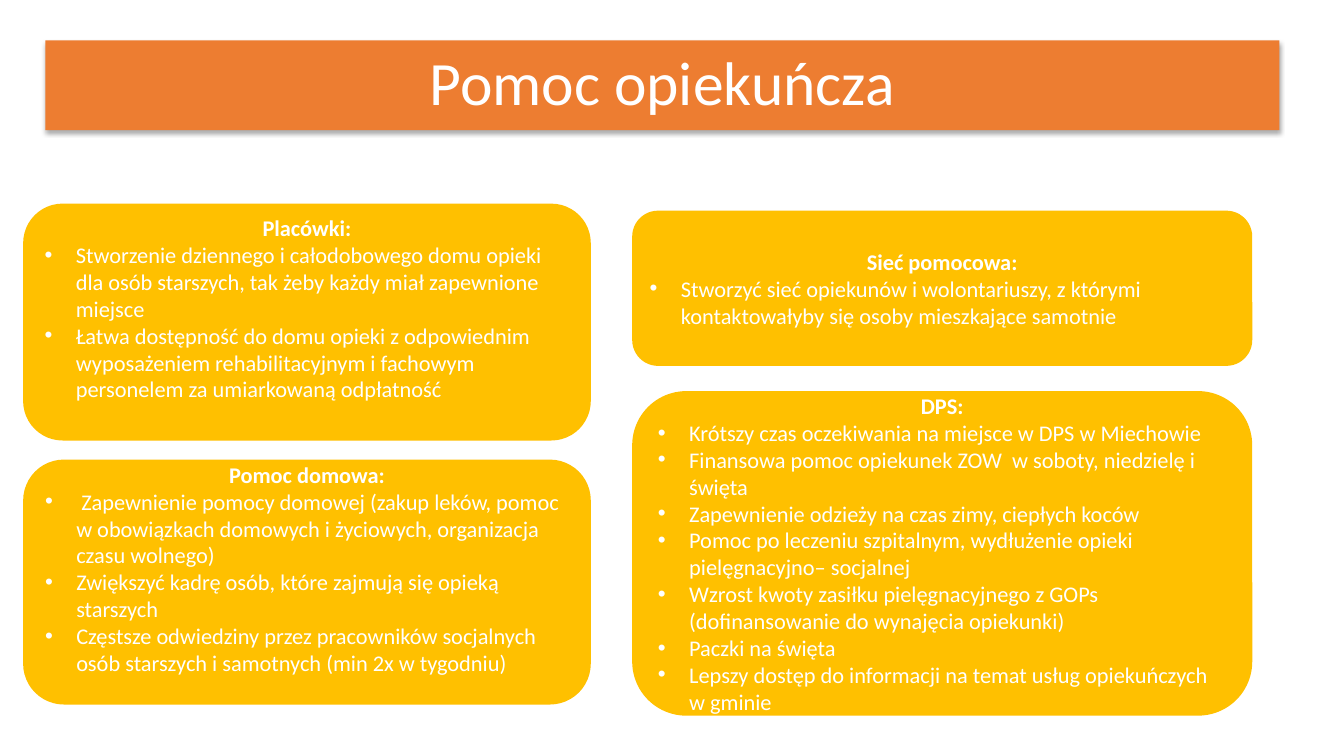
from lxml import etree
from pptx import Presentation
from pptx.dml.color import RGBColor
from pptx.enum.shapes import MSO_SHAPE
from pptx.enum.text import MSO_ANCHOR, PP_ALIGN
from pptx.oxml import parse_xml
from pptx.oxml.ns import nsdecls, qn
from pptx.util import Inches, Pt

TITLE = "Pomoc opiekuńcza"
ORANGE, AMBER, WHITE = "ED7D31", "FFC000", "FFFFFF"
INDENT = 0.31

# heading, (left, top, width, height), bottom inset, bullet points
CARDS = [
    ("Placówki:", (0.23, 2.02, 5.63, 2.35), 0.32, [
        "Stworzenie dziennego i całodobowego domu opieki dla osób starszych, tak żeby każdy miał zapewnione miejsce",
        "Łatwa dostępność do domu opieki z odpowiednim wyposażeniem rehabilitacyjnym i fachowym personelem "
        "za umiarkowaną odpłatność",
    ]),
    ("Pomoc domowa:", (0.23, 4.56, 5.63, 2.43), 0.32, [
        " Zapewnienie pomocy domowej (zakup leków, pomoc w obowiązkach domowych i życiowych, "
        "organizacja czasu wolnego)",
        "Zwiększyć kadrę osób, które zajmują się opieką starszych",
        "Częstsze odwiedziny przez pracowników socjalnych osób starszych i samotnych (min 2x w tygodniu)",
    ]),
    ("DPS:", (6.27, 3.88, 6.15, 3.22), 0.05, [
        "Krótszy czas oczekiwania na miejsce w DPS w Miechowie",
        "Finansowa pomoc opiekunek ZOW  w soboty, niedzielę i święta",
        "Zapewnienie odzieży na czas zimy, ciepłych koców",
        "Pomoc po leczeniu szpitalnym, wydłużenie opieki pielęgnacyjno– socjalnej",
        "Wzrost kwoty zasiłku pielęgnacyjnego z GOPs (dofinansowanie do wynajęcia opiekunki)",
        "Paczki na święta",
        "Lepszy dostęp do informacji na temat usług opiekuńczych w gminie",
    ]),
    ("Sieć pomocowa:", (6.27, 2.09, 6.15, 1.54), 0.05, [
        "Stworzyć sieć opiekunów i wolontariuszy, z którymi kontaktowałyby się osoby mieszkające samotnie",
    ]),
]


def set_fill(shape, color):
    shape.fill.solid()
    shape.fill.fore_color.rgb = RGBColor.from_string(color)


def write(paragraph, text, size, bold=False, align=PP_ALIGN.CENTER):
    paragraph.alignment = align
    run = paragraph.add_run()
    run.text = text
    style = {"name": "Calibri", "size": Pt(size), "bold": bold}
    for name, value in style.items():
        setattr(run.font, name, value)
    run.font.color.rgb = RGBColor.from_string(WHITE)


def add_bullet(paragraph):
    properties = paragraph._p.get_or_add_pPr()
    properties.set("marL", str(Inches(INDENT)))
    properties.set("indent", str(-Inches(INDENT)))
    font = etree.SubElement(properties, qn("a:buFont"))
    font.set("typeface", "Arial")
    etree.SubElement(properties, qn("a:buChar")).set("char", "•")


def add_title(slide):
    title = slide.shapes.title
    box = {"left": 0.45, "top": 0.4, "width": 12.24, "height": 0.89}
    for name, value in box.items():
        setattr(title, name, Inches(value))
    set_fill(title, ORANGE)
    title._element.spPr.append(parse_xml(
        f'<a:effectLst {nsdecls("a")}>'
        f'<a:outerShdw blurRad="{Pt(3.5)}" dist="{Pt(2.2)}" dir="5400000" rotWithShape="0">'
        '<a:srgbClr val="000000"><a:alpha val="32000"/></a:srgbClr>'
        '</a:outerShdw></a:effectLst>'))
    frame = title.text_frame
    frame.vertical_anchor = MSO_ANCHOR.MIDDLE
    paragraph = frame.paragraphs[0]
    paragraph.line_spacing = 0.9
    write(paragraph, TITLE, 44)


def add_card(slide, heading, box, bottom_inset, points):
    card = slide.shapes.add_shape(MSO_SHAPE.ROUNDED_RECTANGLE, *map(Inches, box))
    card.shadow.inherit = False
    set_fill(card, AMBER)
    card.line.fill.background()
    frame = card.text_frame
    frame.word_wrap = True
    frame.vertical_anchor = MSO_ANCHOR.MIDDLE
    frame.margin_bottom = Inches(bottom_inset)
    write(frame.paragraphs[0], heading, 16, bold=True)
    for point in points:
        paragraph = frame.add_paragraph()
        write(paragraph, point, 16, align=PP_ALIGN.LEFT)
        add_bullet(paragraph)


def main():
    presentation = Presentation()
    presentation.slide_width = Inches(13.33)
    presentation.slide_height = Inches(7.5)
    slide = presentation.slides.add_slide(presentation.slide_layouts[5])
    add_title(slide)
    for card in CARDS:
        add_card(slide, *card)
    presentation.save("out.pptx")


if __name__ == "__main__":
    main()
